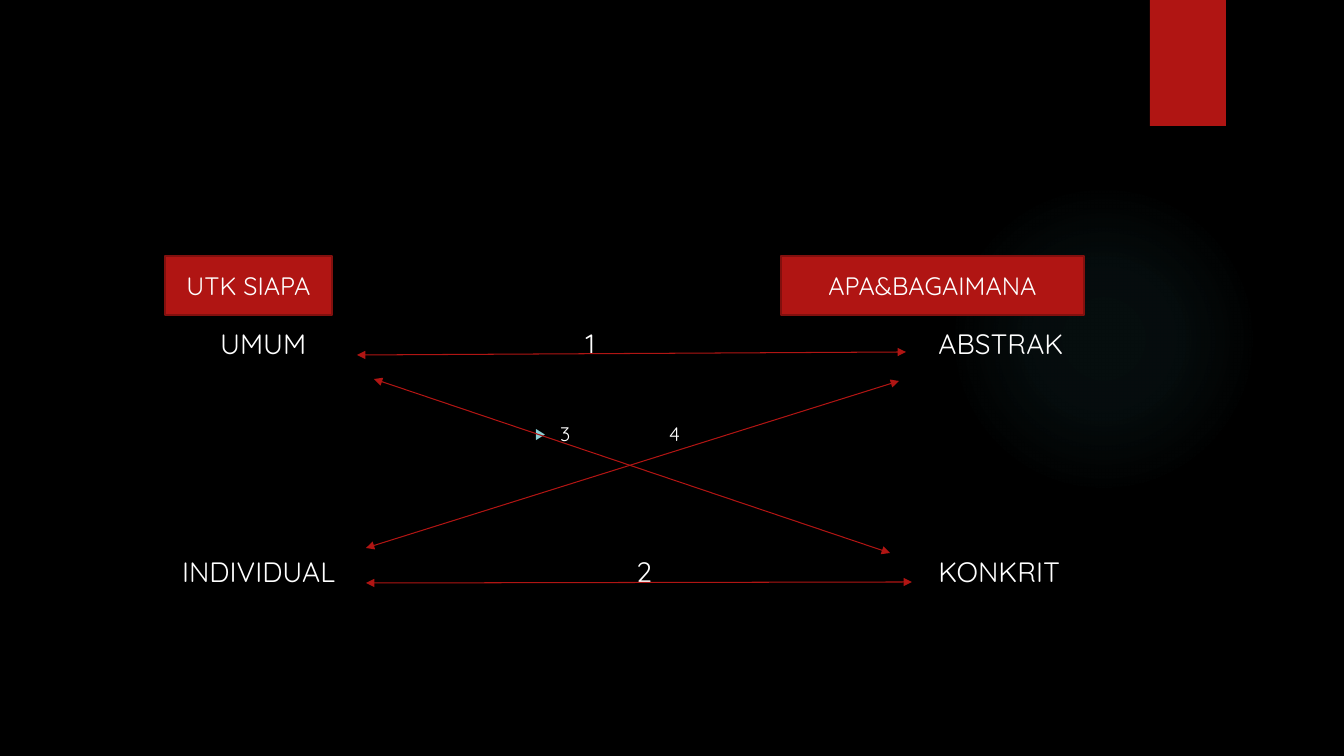
from dataclasses import dataclass

from lxml import etree
from pptx import Presentation
from pptx.dml.color import RGBColor
from pptx.enum.shapes import MSO_CONNECTOR, MSO_SHAPE
from pptx.enum.text import MSO_ANCHOR, MSO_AUTO_SIZE, PP_ALIGN
from pptx.oxml.ns import qn
from pptx.util import Pt

RECT, OVAL = MSO_SHAPE.RECTANGLE, MSO_SHAPE.OVAL
LINE = MSO_CONNECTOR.STRAIGHT
CENTER, MIDDLE, TOP = PP_ALIGN.CENTER, MSO_ANCHOR.MIDDLE, MSO_ANCHOR.TOP
NO_FIT = MSO_AUTO_SIZE.NONE
SCALE = 914400 / 100.8


@dataclass(frozen=True)
class Theme:
    font: str = "Quicksand"
    back: str = "000000"
    text: str = "FFFFFF"
    red: str = "B01513"
    edge: str = "82100E"
    glow: str = "50B9C1"
    bullet: str = "8AD0D6"
    word: int = 20
    label: int = 18
    small: int = 14


THEME = Theme()


def px(*nums):
    return [round(n * SCALE) for n in nums]


def color(code):
    return RGBColor.from_string(code)


def node(parent, tag, **attrs):
    return etree.SubElement(parent, qn(tag), {k: str(v) for k, v in attrs.items()})


def add_run(para, text, size):
    run = para.add_run()
    run.text = text
    run.font.name = THEME.font
    run.font.size = Pt(size)
    run.font.color.rgb = color(THEME.text)


def add_block(slide, box, edge=None):
    shape = slide.shapes.add_shape(RECT, *px(*box))
    shape.shadow.inherit = False
    shape.fill.solid()
    shape.fill.fore_color.rgb = color(THEME.red)
    if edge:
        shape.line.color.rgb = color(edge)
        shape.line.width = Pt(1.5)
    else:
        shape.line.fill.background()
    return shape


def add_label(slide, box, text):
    frame = add_block(slide, box, THEME.edge).text_frame
    frame.word_wrap = True
    frame.vertical_anchor = MIDDLE
    para = frame.paragraphs[0]
    para.alignment = CENTER
    add_run(para, text, THEME.label)


def add_glow(slide, box):
    """Draw a round glow that fades out from its centre."""
    shape = slide.shapes.add_shape(OVAL, *px(*box))
    shape.shadow.inherit = False
    shape.line.fill.background()
    shape.fill.background()
    props = shape._element.spPr
    grad = etree.Element(qn("a:gradFill"), rotWithShape="1")
    stops = node(grad, "a:gsLst")
    for pos, alpha in ((0, 7), (36, 6), (69, 0)):
        stop = node(stops, "a:gs", pos=pos * 1000)
        node(node(stop, "a:srgbClr", val=THEME.glow), "a:alpha", val=alpha * 1000)
    round_path = node(grad, "a:path", path="circle")
    node(round_path, "a:fillToRect", l=50000, t=50000, r=50000, b=50000)
    props.replace(props.find(qn("a:noFill")), grad)


def add_arrow(slide, ends):
    """Join two points with a line that has a head at both ends."""
    line = slide.shapes.add_connector(LINE, *px(*ends))
    line.line.color.rgb = color(THEME.red)
    line.line.width = Pt(0.75)
    stroke = line.line._get_or_add_ln()
    for tag in ("a:headEnd", "a:tailEnd"):
        node(stroke, tag, type="triangle")
    node(line._element.spPr, "a:effectLst")


def set_indent(para, left, first):
    props = para._p.get_or_add_pPr()
    for name, num in zip(("marL", "indent"), px(left, first)):
        props.set(name, str(num))
    return props


def set_row(para, first, text):
    """Fill a plain row; its tabs step along the default half-inch stops."""
    node(set_indent(para, 0, first), "a:buNone")
    add_run(para, text, THEME.word)


def set_point(para, text, stop):
    """Fill a bulleted line that has one tab stop."""
    props = set_indent(para, 428, -25)
    node(node(props, "a:buClr"), "a:srgbClr", val=THEME.bullet)
    node(props, "a:buSzPct", val=80000)
    node(props, "a:buChar", char="▶")
    node(node(props, "a:tabLst"), "a:tab", pos=px(stop)[0], algn="l")
    add_run(para, text, THEME.small)


def fill_body(slide, box):
    body = slide.placeholders[1]
    body.left, body.top, body.width, body.height = px(*box)
    slide.shapes._spTree.append(body._element)
    frame = body.text_frame
    frame.word_wrap = True
    frame.auto_size = NO_FIT
    frame.vertical_anchor = TOP

    set_row(frame.paragraphs[0], 88, "UMUM\t\t\t\t\t\t1\t\t\t\t\t\t\tABSTRAK")

    mid = frame.add_paragraph()
    mid.level = 8
    set_point(mid, "3\t4", 537)
    mid.space_before = Pt(44.5)

    last = frame.add_paragraph()
    set_row(last, 50, "INDIVIDUAL\t\t\t\t\t\t2\t\t\t\t\t\tKONKRIT")
    last.space_before = Pt(77.5)


def main():
    deck = Presentation()
    deck.slide_width, deck.slide_height = px(1344, 756)
    slide = deck.slides.add_slide(deck.slide_layouts[1])
    slide.background.fill.solid()
    slide.background.fill.fore_color.rgb = color(THEME.back)
    title = slide.shapes.title._element
    title.getparent().remove(title)

    add_glow(slide, (949, 184, 310, 310))
    add_block(slide, (1150, 0, 76, 126))
    fill_body(slide, (122, 321, 986, 368))
    add_label(slide, (165, 256, 167, 59), "UTK SIAPA")
    add_label(slide, (781, 256, 303, 59), "APA&BAGAIMANA")
    for ends in (
        (357, 355, 906, 352),
        (366, 583, 912, 582),
        (374, 379, 890, 553),
        (366, 548, 899, 381),
    ):
        add_arrow(slide, ends)
    deck.save("out.pptx")


if __name__ == "__main__":
    main()
